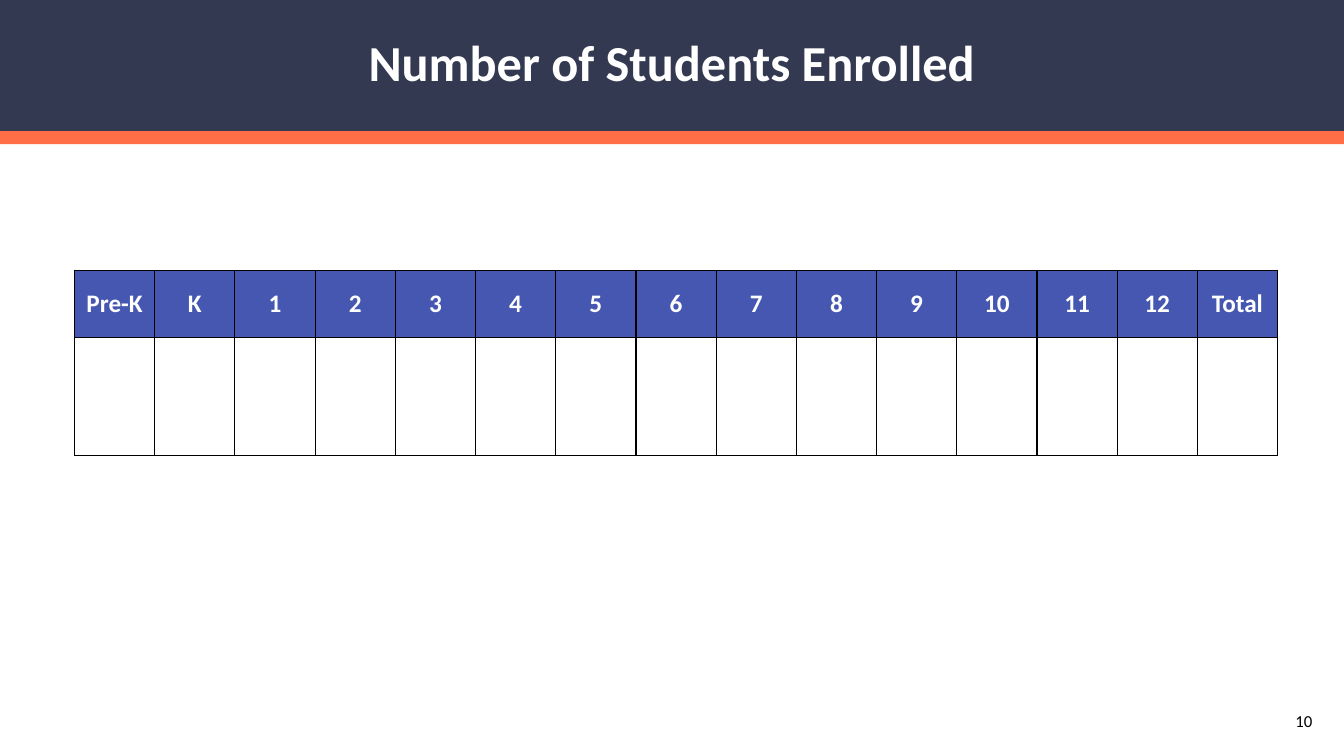
from pptx import Presentation
from pptx.dml.color import RGBColor
from pptx.enum import shapes, text
from pptx.oxml import parse_xml
from pptx.oxml.ns import nsdecls
from pptx.util import Pt

COLORS = {
    "navy": "333951",
    "orange": "FF6E46",
    "blue": "4657B1",
    "white": "FFFFFF",
    "black": "000000",
}
GRADES = ["Pre-K", "K", *map(str, range(1, 13)), "Total"]
ROW_HEIGHTS = [48, 84.4]
COLUMN_WIDTH = 57.3


def color(name):
    return RGBColor.from_string(COLORS[name])


def write(frame, words, align, color_name, **font_format):
    """Fill a text frame or cell frame with one formatted paragraph."""
    frame.text = words
    paragraph = frame.paragraphs[0]
    paragraph.alignment = align
    font = paragraph.runs[0].font
    font.color.rgb = color(color_name)
    for name, value in {"name": "Calibri", **font_format}.items():
        setattr(font, name, value)


def add_band(slide, top, height, color_name):
    band = slide.shapes.add_shape(
        shapes.MSO_SHAPE.RECTANGLE, 0, Pt(top), Pt(960), Pt(height))
    band.shadow.inherit = False
    band.fill.solid()
    band.fill.fore_color.rgb = color(color_name)
    band.line.fill.background()


def set_title(slide, words):
    title = slide.shapes.title
    places = {"left": 66, "top": 0, "width": 828, "height": 93.6}
    for name, value in places.items():
        setattr(title, name, Pt(value))
    title.text_frame.vertical_anchor = text.MSO_ANCHOR.MIDDLE
    write(title.text_frame, words, text.PP_ALIGN.CENTER, "white", size=Pt(36), bold=True)
    title.text_frame.paragraphs[0].line_spacing = 0.9
    title.element.getparent().append(title.element)  # in front of the bands


def style_cell(cell, fill_name):
    cell.vertical_anchor = text.MSO_ANCHOR.MIDDLE
    cell.margin_left = cell.margin_right = Pt(3.6)
    properties = cell._tc.get_or_add_tcPr()
    for side in ("lnL", "lnR", "lnT", "lnB"):
        properties.append(parse_xml(
            f'<a:{side} {nsdecls("a")} w="{Pt(1)}"><a:solidFill>'
            f'<a:srgbClr val="{COLORS["black"]}"/></a:solidFill></a:{side}>'))
    cell.fill.solid()
    cell.fill.fore_color.rgb = color(fill_name)


def add_enrollment_table(slide):
    table = slide.shapes.add_table(
        len(ROW_HEIGHTS), len(GRADES), Pt(53.2), Pt(193),
        Pt(COLUMN_WIDTH * len(GRADES)), Pt(sum(ROW_HEIGHTS))).table
    for row, height in zip(table.rows, ROW_HEIGHTS):
        row.height = Pt(height)
    for index, grade in enumerate(GRADES):
        table.columns[index].width = Pt(COLUMN_WIDTH)
        heading = table.cell(0, index)
        style_cell(heading, "blue")
        write(heading.text_frame, grade, text.PP_ALIGN.CENTER, "white", size=Pt(18), bold=True)
        style_cell(table.cell(1, index), "white")


def add_page_number(slide, number):
    box = slide.shapes.add_textbox(Pt(728.6), Pt(500.4), Pt(216), Pt(28.8))
    frame = box.text_frame
    frame.word_wrap = True
    frame.vertical_anchor = text.MSO_ANCHOR.MIDDLE
    write(frame, number, text.PP_ALIGN.RIGHT, "black", size=Pt(12))


def main():
    presentation = Presentation()
    presentation.slide_width, presentation.slide_height = Pt(960), Pt(540)
    slide = presentation.slides.add_slide(presentation.slide_layouts[5])
    add_band(slide, 63.4, 39.6, "orange")
    add_band(slide, 0, 93.6, "navy")
    set_title(slide, "Number of Students Enrolled")
    add_enrollment_table(slide)
    add_page_number(slide, "10")
    presentation.save("out.pptx")


if __name__ == "__main__":
    main()
